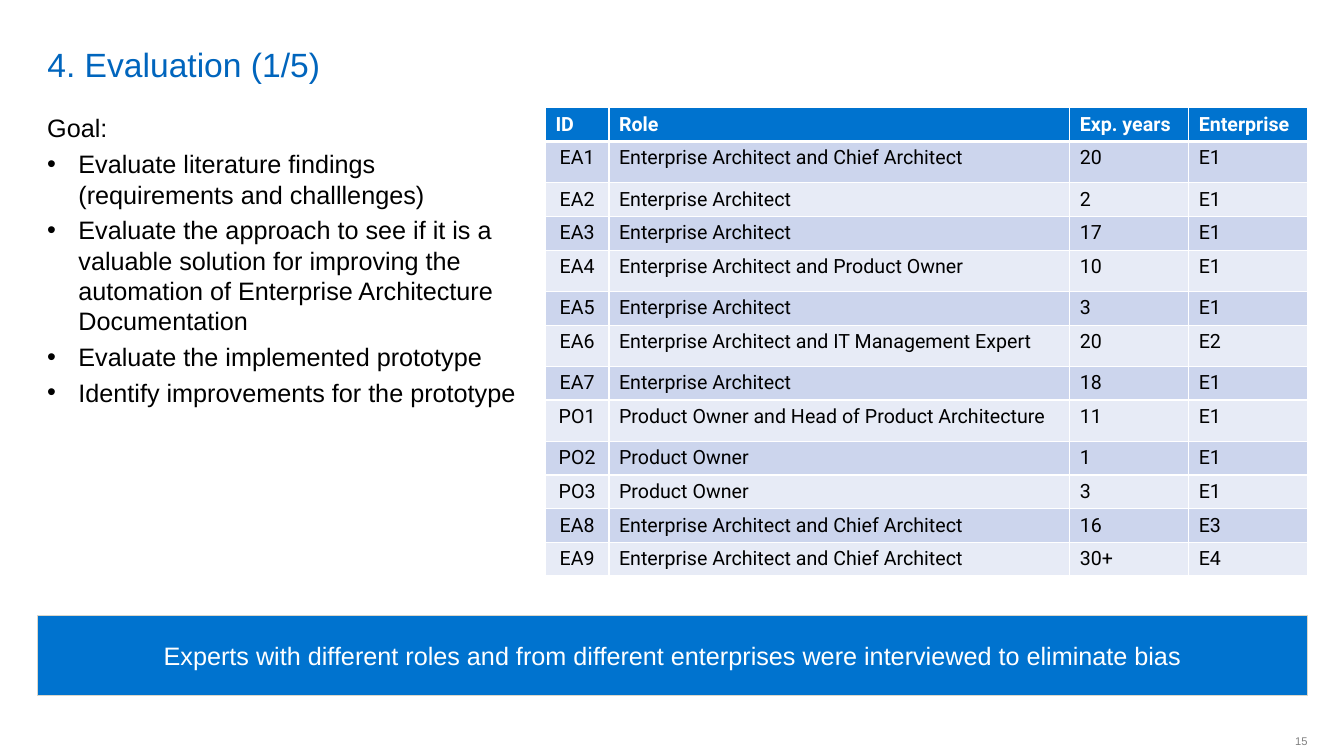
import dataclasses

import lxml.etree
import pptx
import pptx.dml.color
import pptx.enum.shapes
import pptx.enum.text
import pptx.oxml.ns
import pptx.util

ALIGN = pptx.enum.text.PP_ALIGN
ANCHOR = pptx.enum.text.MSO_ANCHOR
Inches = pptx.util.Inches


@dataclasses.dataclass(frozen=True)
class Theme:
    font: str = "Arial"
    table_font: str = "Roboto"
    title: str = "0065BD"
    accent: str = "0073CF"
    text: str = "000000"
    muted: str = "808080"
    light: str = "FFFFFF"
    outline: str = "DAD7CB"
    bands: tuple = ("CCD5ED", "E7EBF6")
    title_size: int = 24
    body_size: int = 18
    table_size: int = 14
    number_size: int = 8


THEME = Theme()
WIDTH, HEIGHT = 13.33, 7.5
LEFT, RIGHT, TOP = 0.37, 12.97, 1.07
TABLE_LEFT = 5.41
COLUMN_WIDTHS = (0.63, 4.57, 1.18, 1.18)
ROW_HEIGHT, TALL_ROW_HEIGHT = 0.33, 0.41
TALL_ROWS = {"EA1", "EA4", "EA6", "PO1"}
INDENT = 0.31

GOALS = (
    "Evaluate literature findings (requirements and challlenges)",
    "Evaluate the approach to see if it is a valuable solution for improving "
    "the automation of Enterprise Architecture Documentation",
    "Evaluate the implemented prototype",
    "Identify improvements for the prototype",
)
HEADER = ("ID", "Role", "Exp. years", "Enterprise")
EXPERTS = (
    ("EA1", "Enterprise Architect and Chief Architect", "20", "E1"),
    ("EA2", "Enterprise Architect", "2", "E1"),
    ("EA3", "Enterprise Architect", "17", "E1"),
    ("EA4", "Enterprise Architect and Product Owner", "10", "E1"),
    ("EA5", "Enterprise Architect", "3", "E1"),
    ("EA6", "Enterprise Architect and IT Management Expert", "20", "E2"),
    ("EA7", "Enterprise Architect", "18", "E1"),
    ("PO1", "Product Owner and Head of Product Architecture", "11", "E1"),
    ("PO2", "Product Owner", "1", "E1"),
    ("PO3", "Product Owner", "3", "E1"),
    ("EA8", "Enterprise Architect and Chief Architect", "16", "E3"),
    ("EA9", "Enterprise Architect and Chief Architect", "30+", "E4"),
)


def rgb(value):
    return pptx.dml.color.RGBColor.from_string(value)


def apply_format(target, values):
    for name, value in values.items():
        setattr(target, name, value)


def write(para, text, size, color, font=THEME.font, bold=False, align=ALIGN.LEFT):
    span = para.add_run()
    span.text = text
    para.alignment = align
    apply_format(span.font, {"name": font, "size": pptx.util.Pt(size), "bold": bold})
    span.font.color.rgb = rgb(color)


def add_bullet(para):
    properties = para._p.get_or_add_pPr()
    properties.set("marL", str(Inches(INDENT)))
    properties.set("indent", str(-Inches(INDENT)))
    for tag, name, value in (("a:buFont", "typeface", THEME.font), ("a:buChar", "char", "•")):
        bullet = lxml.etree.SubElement(properties, pptx.oxml.ns.qn(tag))
        bullet.set(name, value)


def add_title(page, text):
    title = page.shapes.title
    apply_format(title, {"left": Inches(LEFT), "top": Inches(0.05),
                         "width": Inches(11.58), "height": Inches(0.79)})
    apply_format(title.text_frame, {
        "vertical_anchor": ANCHOR.BOTTOM, "margin_top": 0, "margin_bottom": 0,
        "word_wrap": True, "auto_size": pptx.enum.text.MSO_AUTO_SIZE.NONE})
    write(title.text_frame.paragraphs[0], text, THEME.title_size, THEME.title)


def add_goals(page):
    box = page.shapes.add_textbox(
        Inches(LEFT), Inches(TOP), Inches(TABLE_LEFT - LEFT), Inches(4.17))
    frame = box.text_frame
    frame.word_wrap = True
    write(frame.paragraphs[0], "Goal:", THEME.body_size, THEME.text)
    for goal in GOALS:
        para = frame.add_paragraph()
        add_bullet(para)
        para.space_before = pptx.util.Pt(4)
        write(para, goal, THEME.body_size, THEME.text)


def set_borders(cell, top, bottom):
    """Draw the four edges of a cell; top and bottom are widths in points."""
    properties = cell._tc.get_or_add_tcPr()
    for side, width in (("L", 1), ("R", 1), ("T", top), ("B", bottom)):
        line = lxml.etree.SubElement(properties, pptx.oxml.ns.qn(f"a:ln{side}"))
        line.set("w", str(pptx.util.Pt(width)))
        fill = lxml.etree.SubElement(line, pptx.oxml.ns.qn("a:solidFill"))
        lxml.etree.SubElement(fill, pptx.oxml.ns.qn("a:srgbClr")).set("val", THEME.light)


def add_experts(page):
    rows = (HEADER,) + EXPERTS
    heights = [TALL_ROW_HEIGHT if row[0] in TALL_ROWS else ROW_HEIGHT for row in rows]
    table = page.shapes.add_table(
        len(rows), len(HEADER), Inches(TABLE_LEFT), Inches(TOP),
        Inches(sum(COLUMN_WIDTHS)), Inches(sum(heights))).table
    for column, width in zip(table.columns, COLUMN_WIDTHS):
        column.width = Inches(width)
    for r, (values, height) in enumerate(zip(rows, heights)):
        table.rows[r].height = Inches(height)
        is_header = r == 0
        fill = THEME.accent if is_header else THEME.bands[(r - 1) % 2]
        color = THEME.light if is_header else THEME.text
        for c, value in enumerate(values):
            cell = table.cell(r, c)
            set_borders(cell, top=3 if r == 1 else 1, bottom=3 if is_header else 1)
            cell.fill.solid()
            cell.fill.fore_color.rgb = rgb(fill)
            align = ALIGN.CENTER if c == 0 and not is_header else ALIGN.LEFT
            write(cell.text_frame.paragraphs[0], value, THEME.table_size, color,
                  THEME.table_font, is_header, align)


def add_banner(page, text):
    banner = page.shapes.add_shape(
        pptx.enum.shapes.MSO_SHAPE.RECTANGLE,
        Inches(LEFT), Inches(6.11), Inches(RIGHT - LEFT), Inches(0.79))
    banner.shadow.inherit = False
    banner.fill.solid()
    banner.fill.fore_color.rgb = rgb(THEME.accent)
    banner.line.color.rgb = rgb(THEME.outline)
    banner.line.width = pptx.util.Pt(0.75)
    apply_format(banner.text_frame, {"vertical_anchor": ANCHOR.MIDDLE, "word_wrap": True})
    write(banner.text_frame.paragraphs[0], text, THEME.body_size, THEME.light,
          align=ALIGN.CENTER)


def add_page_number(page, number):
    width = 0.36
    box = page.shapes.add_textbox(
        Inches(RIGHT - width), Inches(7.19), Inches(width), Inches(0.32))
    apply_format(box.text_frame, {
        "vertical_anchor": ANCHOR.MIDDLE, "margin_right": 0, "word_wrap": False})
    write(box.text_frame.paragraphs[0], number, THEME.number_size, THEME.muted,
          align=ALIGN.RIGHT)


def main():
    deck = pptx.Presentation()
    apply_format(deck, {"slide_width": Inches(WIDTH), "slide_height": Inches(HEIGHT)})
    page = deck.slides.add_slide(deck.slide_layouts.get_by_name("Title Only"))
    add_title(page, "4. Evaluation (1/5)")
    add_goals(page)
    add_page_number(page, "15")
    add_experts(page)
    add_banner(page, "Experts with different roles and from different enterprises "
                     "were interviewed to eliminate bias")
    deck.save("out.pptx")


if __name__ == "__main__":
    main()
